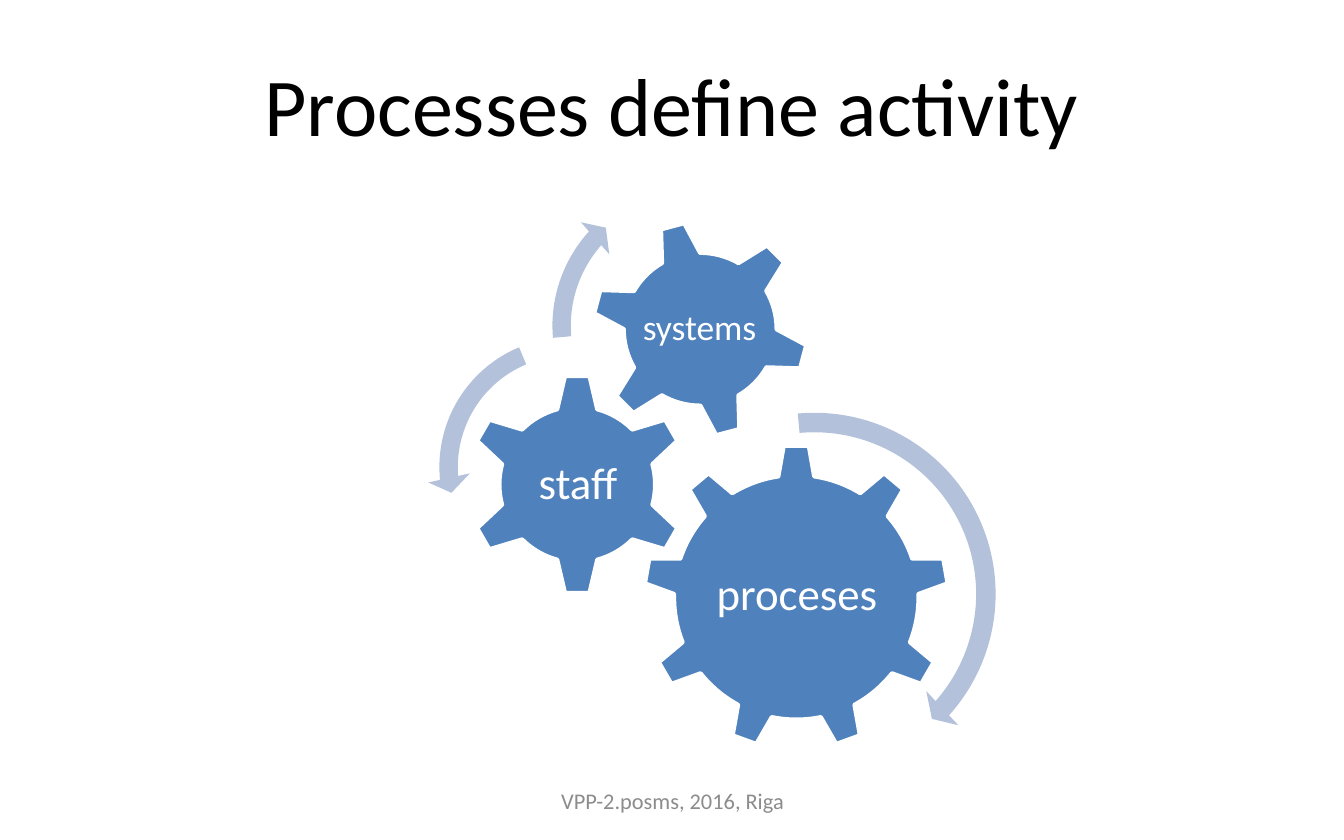
from pptx import Presentation
from pptx.dml.color import RGBColor
from pptx.enum.shapes import MSO_SHAPE as Shp
from pptx.enum.text import MSO_ANCHOR as Anchor, PP_ALIGN as Align
from pptx.util import Inches, Pt

BLUE = RGBColor(0x4F, 0x81, 0xBD)
PALE = RGBColor(0xB3, 0xC1, 0xDB)
WHITE = RGBColor(0xFF, 0xFF, 0xFF)
BLACK = RGBColor(0, 0, 0)
GRAY = RGBColor(0x8C, 0x8C, 0x8C)

# gear kind, box, turn, label, label box, text size
GEARS = [
    (Shp.GEAR_9, (4.79, 3.31, 2.27, 2.27), 0, "proceses", (5.25, 3.85, 1.36, 1.17), 24),
    (Shp.GEAR_6, (3.47, 2.78, 1.65, 1.65), 0, "staff", (3.89, 3.2, 0.82, 0.81), 24),
    (Shp.GEAR_6, (4.4, 1.64, 1.62, 1.62), 345, "systems", (4.75, 1.99, 0.91, 0.91), 19),
]
# arrow kind, box, adjustments
ARROWS = [
    (Shp.CIRCULAR_ARROW, (4.61, 2.97, 2.9, 2.9), (0.05, 2.99, 25.05, 158.85, 0.06)),
    (Shp.LEFT_CIRCULAR_ARROW, (3.18, 2.42, 2.11, 2.11), (0.065, 4.3, 104.89, 148.38, 0.075)),
    (Shp.CIRCULAR_ARROW, (4.02, 1.29, 2.27, 2.27), (0.06, 3.94, 133.14, 105.08, 0.07)),
]


def scale(box):
    return [Inches(v) for v in box]


def write(shape, text, size, color, **extra):
    frame = shape.text_frame
    form = {"word_wrap": True, "vertical_anchor": Anchor.MIDDLE, **extra}
    for key, val in form.items():
        setattr(frame, key, val)
    para = frame.paragraphs[0]
    para.alignment = Align.CENTER
    run = para.add_run()
    run.text = text
    for key, val in {"name": "Calibri", "size": Pt(size)}.items():
        setattr(run.font, key, val)
    run.font.color.rgb = color
    return para


def add_solid(slide, kind, box, color):
    shape = slide.shapes.add_shape(kind, *scale(box))
    shape.shadow.inherit = False
    shape.fill.solid()
    shape.fill.fore_color.rgb = color
    return shape


def add_title(slide, box):
    title = slide.shapes.title
    for key, val in zip(("left", "top", "width", "height"), scale(box)):
        setattr(title, key, val)
    write(title, "Processes define activity", 44, BLACK)


def add_gear(slide, kind, box, turn, text, area, size):
    gear = add_solid(slide, kind, box, BLUE)
    gear.rotation = turn
    gear.line.color.rgb = WHITE
    gear.line.width = Pt(2)
    # The label stays level while the gear turns
    label = slide.shapes.add_textbox(*scale(area))
    sides = ("left", "top", "right", "bottom")
    pads = {f"margin_{side}": Inches(0.03) for side in sides}
    write(label, text, size, WHITE, **pads).line_spacing = 0.9


def add_arrow(slide, kind, box, bends):
    arrow = add_solid(slide, kind, box, PALE)
    arrow.line.fill.background()
    for i, bend in enumerate(bends):
        arrow.adjustments[i] = bend


def add_footer(slide, box):
    foot = slide.shapes.add_textbox(*scale(box))
    write(foot, "VPP-2.posms, 2016, Riga", 12, GRAY)


def main():
    deck = Presentation()
    deck.slide_width, deck.slide_height = Inches(10), Inches(6.25)
    slide = deck.slides.add_slide(deck.slide_layouts[5])
    add_title(slide, (0.5, 0.25, 9, 1.04))
    for gear in GEARS:
        add_gear(slide, *gear)
    for arrow in ARROWS:
        add_arrow(slide, *arrow)
    add_footer(slide, (3.42, 5.79, 3.17, 0.33))
    deck.save("out.pptx")


if __name__ == "__main__":
    main()
